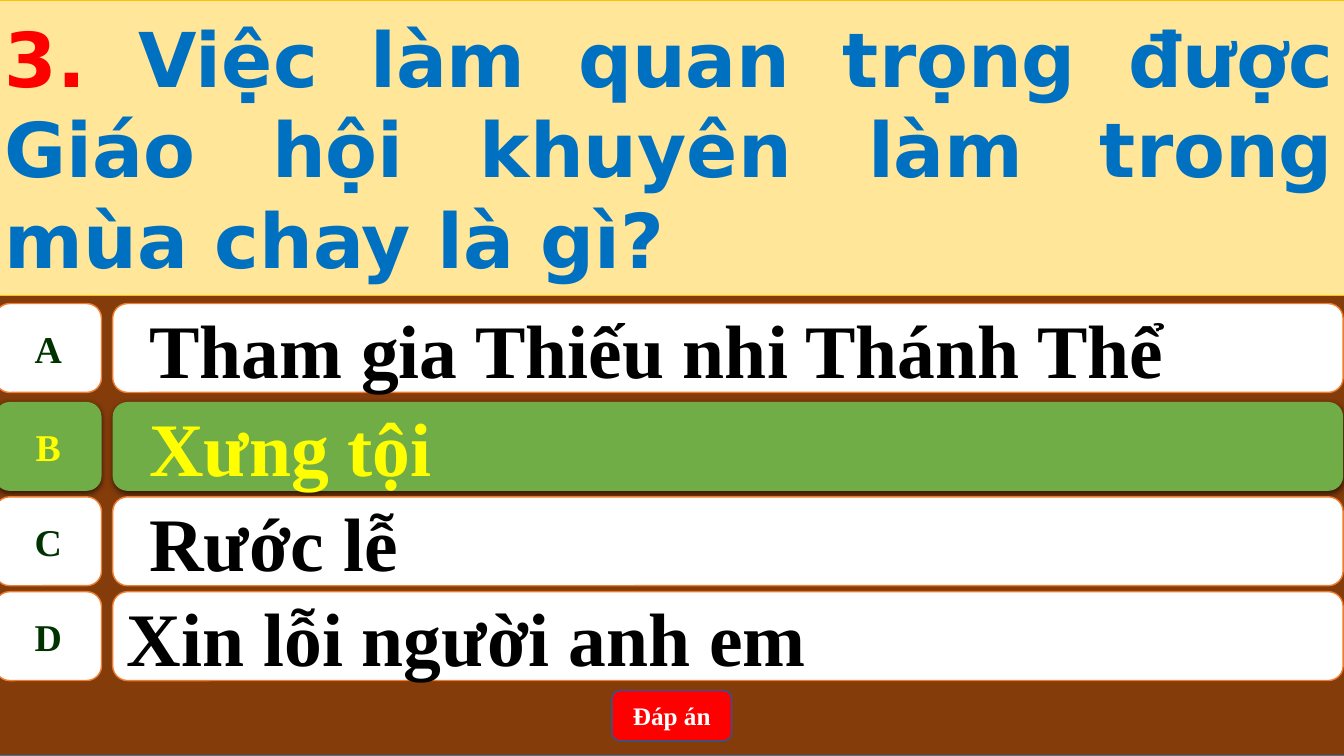
from lxml.etree import SubElement
from pptx import Presentation
from pptx.dml.color import RGBColor
from pptx.enum.shapes import MSO_SHAPE as Shape
from pptx.enum.text import MSO_ANCHOR as Anchor, MSO_AUTO_SIZE as AutoSize, PP_ALIGN as Align
from pptx.oxml.ns import qn
from pptx.util import Cm, Pt

SERIF = "Times New Roman"
SANS = "DejaVu Sans"
BROWN = RGBColor(0x84, 0x3C, 0x0B)
STEEL = RGBColor(0x43, 0x73, 0x9E)
NAVY = RGBColor(0x32, 0x54, 0x91)
CREAM = RGBColor(0xFF, 0xE6, 0x99)
GOLD = RGBColor(0xFF, 0xC0, 0x00)
ORANGE = RGBColor(0xED, 0x7D, 0x31)
BLUE = RGBColor(0x00, 0x70, 0xC0)
RED = RGBColor(0xFF, 0x00, 0x00)
GREEN = RGBColor(0x70, 0xAD, 0x47)
DARK_GREEN = RGBColor(0x00, 0x33, 0x00)
YELLOW = RGBColor(0xFF, 0xFF, 0x00)
WHITE = RGBColor(0xFF, 0xFF, 0xFF)
BLACK = RGBColor(0x00, 0x00, 0x00)

EDGE = Cm(-0.13)
FULL_WIDTH = Cm(34.01)
ROW_HEIGHT = Cm(2.24)
ANSWERS = [
    ("A", "Tham gia Thiếu nhi Thánh Thể", 7.65, True),
    ("B", "Xưng tội", 10.13, True),
    ("C", "Rước lễ", 12.52, True),
    ("D", "Xin lỗi người anh em", 14.91, False),
]
CORRECT = "B"


def paint(shape, fill, outline=None, weight=1):
    """Give a shape a solid fill and an optional outline."""
    shape.fill.solid()
    shape.fill.fore_color.rgb = fill
    if outline is None:
        shape.line.fill.background()
    else:
        shape.line.color.rgb = outline
        shape.line.width = Pt(weight)


def add_panel(shapes, kind, box, fill, outline=None):
    """Add a painted shape without a shadow."""
    panel = shapes.add_shape(kind, *box)
    panel.shadow.inherit = False
    paint(panel, fill, outline)
    return panel


def style_run(run, font, size, color):
    """Set a run in bold with the given font, size and colour."""
    run.font.name = font
    run.font.size = Pt(size)
    run.font.bold = True
    run.font.color.rgb = color


def write(panel, text, size, color, align):
    """Write one serif paragraph in a panel."""
    paragraph = panel.text_frame.paragraphs[0]
    paragraph.text = text
    paragraph.alignment = align
    style_run(paragraph.runs[0], SERIF, size, color)
    return paragraph


def drop_shadow(panel):
    """Cast a soft shadow straight down."""
    effects = panel._element.spPr.find(qn("a:effectLst"))
    shadow = SubElement(effects, qn("a:outerShdw"), blurRad=str(Pt(4.5)),
                        dist=str(Pt(1.5)), dir="5400000", rotWithShape="0")
    tint = SubElement(shadow, qn("a:srgbClr"), val=str(BLACK))
    SubElement(tint, qn("a:alpha"), val="63000")


def add_answer(slide, letter, answer, top, indented):
    """Add a lettered answer row, highlighted when correct."""
    correct = letter == CORRECT
    fill, outline = (GREEN, None) if correct else (WHITE, ORANGE)
    row = slide.shapes.add_group_shape().shapes

    label = add_panel(row, Shape.FLOWCHART_ALTERNATE_PROCESS,
                      (EDGE, Cm(top), Cm(2.69), ROW_HEIGHT), fill, outline)
    label.text_frame.word_wrap = False
    write(label, letter, 27, YELLOW if correct else DARK_GREEN, Align.CENTER)

    bar = add_panel(row, Shape.ROUNDED_RECTANGLE,
                    (Cm(2.84), Cm(top), Cm(31.01), ROW_HEIGHT), fill, outline)
    bar.text_frame.word_wrap = True
    paragraph = write(bar, answer, 54, YELLOW if correct else BLACK, Align.LEFT)
    if indented:
        paragraph.level = 1
        properties = paragraph._p.get_or_add_pPr()
        properties.set("marL", str(Cm(1.27)))
        properties.set("indent", str(Cm(-0.71)))
    if correct:
        drop_shadow(label)
        drop_shadow(bar)


def fill_question(slide, number, question):
    """Place the question in the title and bring it above the backdrop."""
    title = slide.shapes.title
    title.left, title.top, title.width, title.height = EDGE, Cm(0), FULL_WIDTH, Cm(7.44)
    paint(title, CREAM, GOLD, 0.5)
    frame = title.text_frame
    frame.word_wrap = True
    frame.auto_size = AutoSize.NONE
    frame.vertical_anchor = Anchor.MIDDLE
    paragraph = frame.paragraphs[0]
    paragraph.text = number
    paragraph.alignment = Align.JUSTIFY
    style_run(paragraph.runs[0], SANS, 54, RED)
    wording = paragraph.add_run()
    wording.text = question
    style_run(wording, SANS, 54, BLUE)
    slide.shapes._spTree.append(title._element)


def main():
    """Build the quiz slide and save it."""
    deck = Presentation()
    deck.slide_width, deck.slide_height = Cm(33.87), Cm(19.05)
    slide = deck.slides.add_slide(deck.slide_layouts[5])

    add_panel(slide.shapes, Shape.RECTANGLE,
              (EDGE, Cm(0), FULL_WIDTH, Cm(19.05)), BROWN, STEEL)
    fill_question(slide, "3. ", "Việc làm quan trọng được Giáo hội khuyên "
                                "làm trong mùa chay là gì?")
    for answer in ANSWERS:
        add_answer(slide, *answer)
    button = add_panel(slide.shapes, Shape.ROUNDED_RECTANGLE,
                       (Cm(15.42), Cm(17.4), Cm(3.02), Cm(1.27)), RED, NAVY)
    write(button, "Đáp án", 18, WHITE, Align.CENTER)

    deck.save("out.pptx")


if __name__ == "__main__":
    main()
